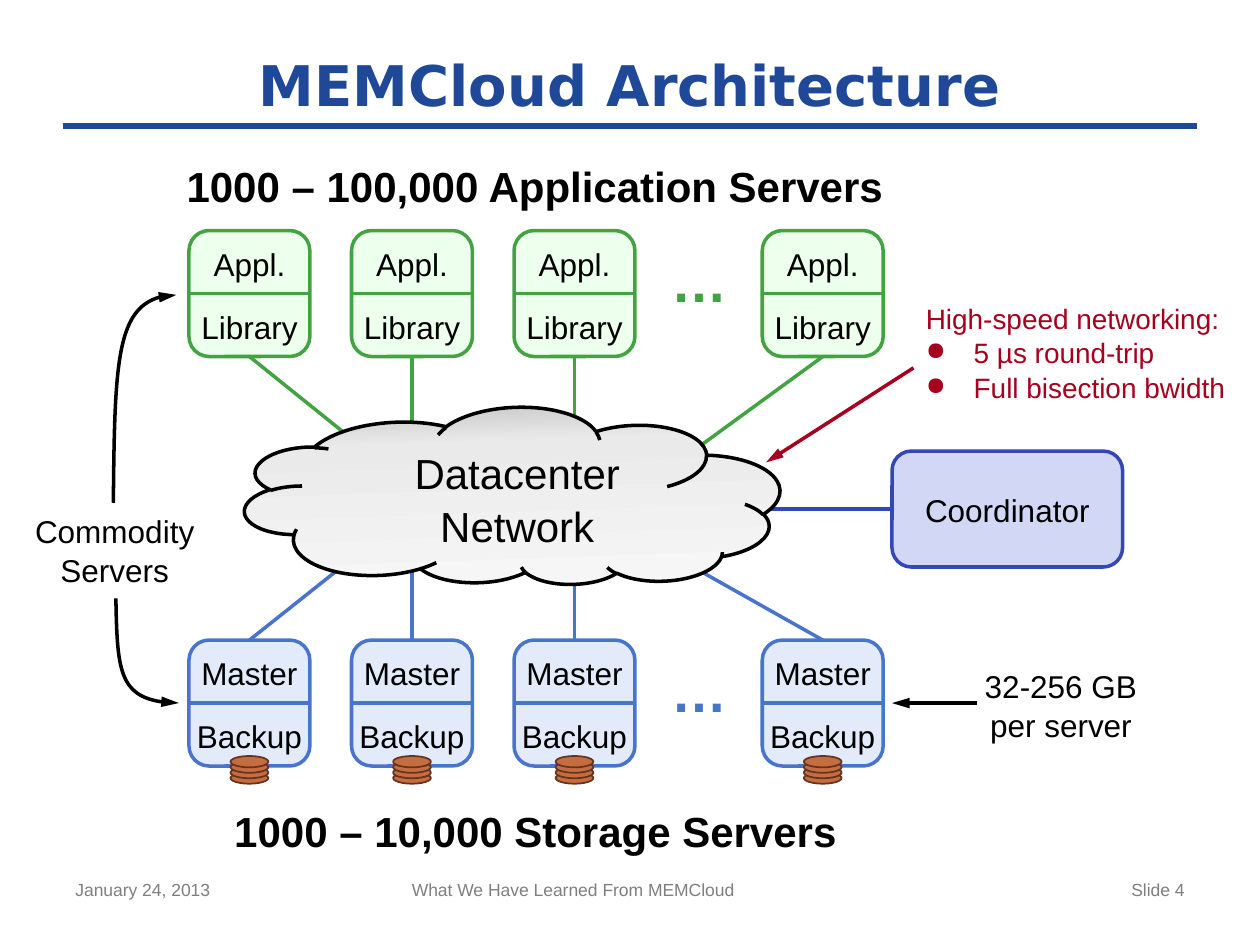
from dataclasses import dataclass

from lxml.etree import SubElement
from pptx import Presentation
from pptx.dml.color import RGBColor
from pptx.enum.shapes import MSO_CONNECTOR, MSO_SHAPE
from pptx.enum.text import MSO_ANCHOR, PP_ALIGN
from pptx.oxml.ns import qn
from pptx.util import Inches, Pt


@dataclass(frozen=True)
class Theme:
    """Colours, fonts and type sizes of the slide."""
    font: str = "Arial"
    title_font: str = "DejaVu Sans"
    title: str = "1F4899"
    text: str = "000000"
    muted: str = "7F7F7F"
    alert: str = "A5001E"
    app: str = "43A343"
    app_fill: str = "EDFFED"
    store: str = "4974CB"
    store_fill: str = "E3EAF9"
    coord: str = "3447B8"
    coord_fill: str = "D2D7F6"
    disk: str = "64351E"
    disk_fill: str = "C56D41"
    cloud: tuple = ((0, "F8F8F8"), (76, "EAEAEA"), (100, "C0C0C0"))
    title_size: int = 32
    heading_size: int = 24
    label_size: int = 18
    note_size: int = 16
    footer_size: int = 10


@dataclass(frozen=True)
class ServerRow:
    """A row of servers, each linked to a point on the network cloud."""
    top: float
    labels: tuple
    color: str
    fill: str
    side: int
    ends: tuple
    disks: int = 0


@dataclass(frozen=True)
class Label:
    """A free-standing text box."""
    text: str
    box: tuple
    fmt: dict


T = Theme()
SERVER_W, SERVER_H = 0.96, 1
SERVER_LEFTS = (*(1.5 + 1.29 * i for i in range(3)), 6.05)
HEADING = dict(size=T.heading_size, bold=True)
FOOTER = dict(size=T.footer_size, color=T.muted, align=PP_ALIGN.LEFT)

ROWS = (
    ServerRow(5.08, ("Master", "Backup"), T.store, T.store_fill, 0,
              ((2.71, 4.5), (3.27, 4.5), (4.56, 4.58), (5.5, 4.5)), 4),
    ServerRow(1.83, ("Appl.", "Library"), T.app, T.app_fill, 2,
              ((2.8, 3.49), (3.27, 3.42), (4.56, 3.42), (5.5, 3.58))),
)
LABELS = (
    Label("Datacenter\nNetwork", (2.98, 3.49, 2.25, 0.91), dict(size=T.heading_size)),
    Label("1000 – 10,000 Storage Servers", (1.5, 6.33, 5.5, 0.5), HEADING),
    Label("1000 – 100,000 Application Servers", (1.33, 1.21, 5.83, 0.5), HEADING),
    Label("Commodity\nServers", (0.17, 4, 1.48, 0.71), dict(wrap=False)),
    Label("32-256 GB\nper server", (7.71, 5.23, 1.42, 0.71), dict(wrap=False)),
    Label("January 24, 2013", (0.5, 6.92, 2.33, 0.43), FOOTER),
    Label("What We Have Learned From MEMCloud", (3.17, 6.92, 3.75, 0.43), FOOTER),
    Label("Slide 4", (7.17, 6.92, 2.33, 0.43), {**FOOTER, "align": PP_ALIGN.RIGHT}),
)


def write(tf, text: str, *, size=T.label_size, color=T.text, bold=False, font=T.font,
          align=PP_ALIGN.CENTER, anchor=MSO_ANCHOR.TOP, wrap=True, inset=None, spacing=1.04):
    """Fill a text frame, one paragraph with a break at each new line."""
    tf.word_wrap, tf.vertical_anchor = wrap, anchor
    if inset is not None:
        tf.margin_left = tf.margin_right = tf.margin_top = tf.margin_bottom = Inches(inset)
    p = tf.paragraphs[0]
    for i, part in enumerate(text.splitlines()):
        if i:
            p.add_line_break()
        add_run(p, part, size, color, bold, font)
    p.alignment, p.line_spacing = align, spacing


def add_run(p, text: str, size: float, color: str, bold=False, font=T.font):
    """Append a formatted run."""
    r = p.add_run()
    r.text = text
    r.font.size, r.font.bold, r.font.name = Pt(size), bold, font
    r.font.color.rgb = RGBColor.from_string(color)


def add_text(shapes, text: str, box: tuple, **fmt):
    """Add a text box."""
    write(shapes.add_textbox(*map(Inches, box)).text_frame, text, **fmt)


def set_line(sp, color: str, width: float = 2, arrow=False):
    """Format an outline, with an arrowhead at its end if asked."""
    sp.line.color.rgb, sp.line.width = RGBColor.from_string(color), Pt(width)
    if arrow:
        SubElement(sp.line._get_or_add_ln(), qn("a:tailEnd"), type="triangle", w="med", len="lg")


def add_box(shapes, kind, box: tuple, fill: str, line: str, width: float = 2):
    """Add a preset shape with a plain fill and outline."""
    sp = shapes.add_shape(kind, *map(Inches, box))
    sp.shadow.inherit = False
    sp.fill.solid()
    sp.fill.fore_color.rgb = RGBColor.from_string(fill)
    set_line(sp, line, width)
    return sp


def add_line(shapes, start: tuple, end: tuple, color: str, width: float = 2,
             arrow=False, begin=None, finish=None):
    """Add a straight connector, joined to (shape, site) pairs where given."""
    c = shapes.add_connector(MSO_CONNECTOR.STRAIGHT, *map(Inches, (*start, *end)))
    if begin:
        c.begin_connect(*begin)
    if finish:
        c.end_connect(*finish)
    set_line(c, color, width, arrow)
    SubElement(c._element.spPr, qn("a:effectLst"))


def add_curve(shapes, *points: tuple):
    """Add an arrow along a cubic curve given by its four points."""
    start, *rest = [tuple(map(Inches, pt)) for pt in points]
    sp = shapes.build_freeform(*start).add_line_segments(rest, close=False).convert_to_shape()
    sp.shadow.inherit = False
    sp.fill.background()
    set_line(sp, T.text, arrow=True)
    outline = sp._element.find(".//" + qn("a:path"))
    curve = SubElement(outline, qn("a:cubicBezTo"))
    for segment in outline.findall(qn("a:lnTo")):
        curve.append(segment[0])
        outline.remove(segment)


def add_server(shapes, left: float, row: ServerRow):
    """Add a grouped two-part server and return its frame."""
    parts = shapes.add_group_shape().shapes
    frame = add_box(parts, MSO_SHAPE.ROUNDED_RECTANGLE,
                    (left, row.top, SERVER_W, SERVER_H), row.fill, row.color)
    for i, text in enumerate(row.labels):
        add_text(parts, text, (left, row.top + 0.1 + i / 2, SERVER_W, 0.3), inset=0)
    mid = row.top + SERVER_H / 2
    add_line(parts, (left, mid), (left + SERVER_W, mid), row.color,
             begin=(frame, 1), finish=(frame, 3))
    for i in range(row.disks):
        add_box(parts, MSO_SHAPE.OVAL,
                (left + SERVER_W / 2 - 0.15, row.top + 1.05 - 0.13 * i / 3, 0.3, 0.09),
                T.disk_fill, T.disk, 1)
    return frame


def add_row(shapes, row: ServerRow):
    """Add a row of servers, their network links and the ellipsis."""
    for left, end in zip(SERVER_LEFTS, row.ends):
        frame = add_server(shapes, left, row)
        start = (left + SERVER_W / 2, row.top + row.side / 2 * SERVER_H)
        add_line(shapes, start, end, row.color, begin=(frame, row.side))
    add_text(shapes, "…", (5.23, row.top + 0.06, 0.65, 0.64),
             size=T.title_size, color=row.color, bold=True, wrap=False)


def add_cloud(shapes):
    """Add the network cloud with its gradient."""
    sp = add_box(shapes, MSO_SHAPE.CLOUD, (1.94, 3.24, 4.25, 1.42), T.cloud[0][1], T.text)
    sp.rotation = 358
    sp._element.spPr.find(qn("a:xfrm")).set("flipV", "1")
    sp.fill.gradient()
    grad = sp._element.spPr.find(qn("a:gradFill"))
    grad.set("rotWithShape", "1")
    for child in list(grad):
        grad.remove(child)
    stops = SubElement(grad, qn("a:gsLst"))
    for pos, color in T.cloud:
        stop = SubElement(stops, qn("a:gs"), pos=str(pos * 1000))
        SubElement(stop, qn("a:srgbClr"), val=color)
    SubElement(grad, qn("a:lin"), ang="5400000", scaled="1")


def add_note(shapes, heading: str, bullets: tuple):
    """Add the networking note with its bullets."""
    tf = shapes.add_textbox(*map(Inches, (7.25, 2.33, 2.67, 1))).text_frame
    write(tf, heading, size=T.note_size, color=T.alert, align=PP_ALIGN.LEFT)
    for text in bullets:
        p = tf.add_paragraph()
        p.line_spacing = 1.04
        add_run(p, text, T.note_size, T.alert)
        pPr = p._p.get_or_add_pPr()
        pPr.set("marL", str(Inches(0.38)))
        pPr.set("indent", str(Inches(-0.38)))
        SubElement(SubElement(pPr, qn("a:buClr")), qn("a:srgbClr"), val=T.alert)
        SubElement(pPr, qn("a:buSzPct"), val="90000")
        SubElement(pPr, qn("a:buChar"), char="●")


def main():
    """Build the architecture slide."""
    prs = Presentation()
    prs.slide_width, prs.slide_height = Inches(10), Inches(7.5)
    s = prs.slides.add_slide(prs.slide_layouts[5])
    title, shapes = s.shapes.title, s.shapes
    title.left, title.top, title.width, title.height = map(Inches, (0.5, 0.33, 9, 0.67))
    write(title.text_frame, "MEMCloud Architecture", size=T.title_size, color=T.title,
          bold=True, font=T.title_font, anchor=MSO_ANCHOR.MIDDLE, spacing=1)
    add_line(shapes, (0.5, 1), (9.5, 1), T.title, 4)
    for row in ROWS:
        add_row(shapes, row)
    coord = add_box(shapes, MSO_SHAPE.ROUNDED_RECTANGLE, (7.08, 3.58, 1.83, 0.92),
                    T.coord_fill, T.coord)
    write(coord.text_frame, "Coordinator", anchor=MSO_ANCHOR.MIDDLE)
    add_line(shapes, (7.08, 4.04), (6.01, 4.04), T.coord, begin=(coord, 1))
    add_cloud(shapes)
    for label in LABELS:
        add_text(shapes, label.text, label.box, **label.fmt)
    add_curve(shapes, (0.9, 3.99), (0.91, 2.88), (0.93, 2.34), (1.4, 2.34))
    add_curve(shapes, (0.92, 4.75), (0.93, 5.31), (0.95, 5.58), (1.42, 5.58))
    add_line(shapes, (7.75, 5.58), (7.08, 5.58), T.text, arrow=True)
    add_line(shapes, (7.25, 2.92), (6.08, 3.67), T.alert, arrow=True)
    add_note(shapes, "High-speed networking:", ("5 µs round-trip", "Full bisection bwidth"))
    prs.save("out.pptx")


if __name__ == "__main__":
    main()
